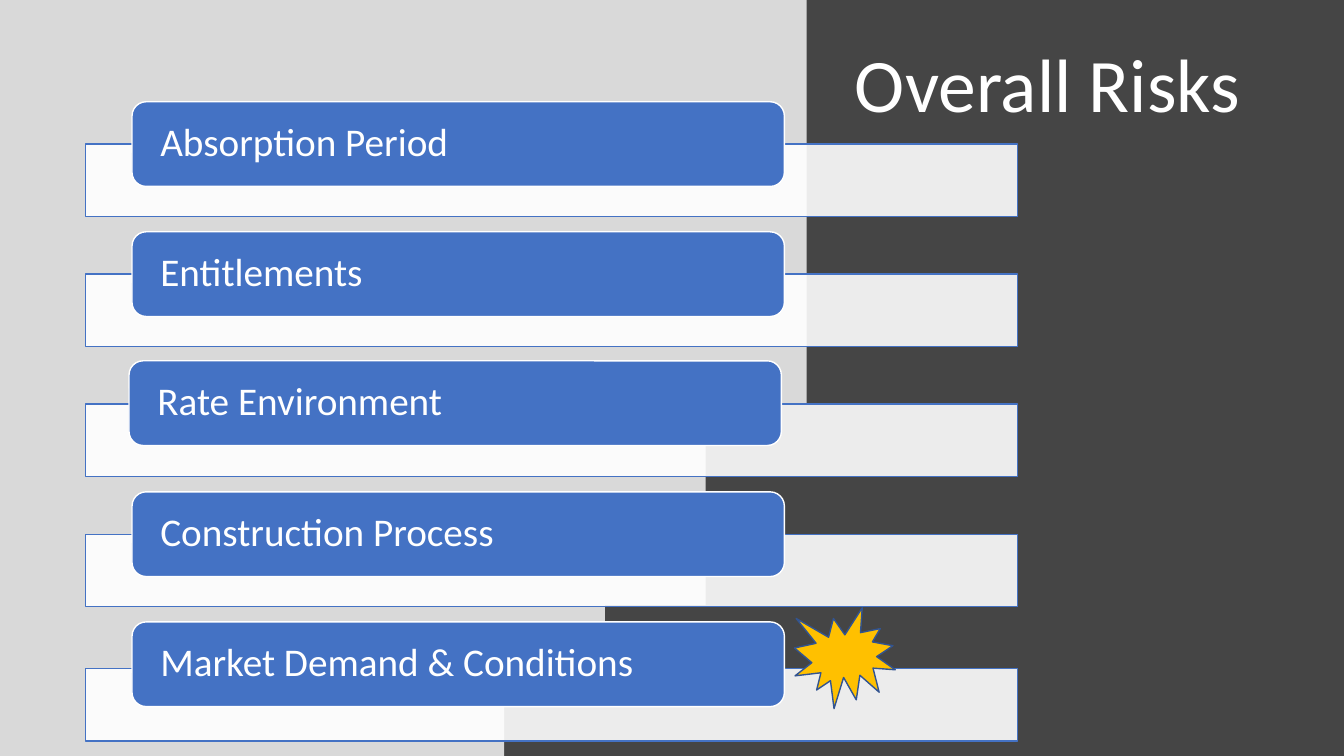
from lxml import etree
from pptx import Presentation
from pptx.dml.color import RGBColor
from pptx.enum import shapes, text
from pptx.oxml.ns import qn
from pptx.util import Inches, Pt

WHITE = RGBColor(0xFF, 0xFF, 0xFF)
DARK = RGBColor(0x45, 0x45, 0x45)
BLUE = RGBColor(0x44, 0x72, 0xC4)
NAVY = RGBColor(0x32, 0x54, 0x91)
GOLD = RGBColor(0xFF, 0xC0, 0x00)
KIND = shapes.MSO_SHAPE


def paint(shape, fill, line=None, alpha=100):
    """Set fill, its opacity in percent, and a 1 pt line or none."""
    shape.shadow.inherit = False
    shape.fill.solid()
    shape.fill.fore_color.rgb = fill
    if alpha < 100:
        color = shape.fill._xPr.find(qn("a:solidFill"))[0]
        etree.SubElement(color, qn("a:alpha"), val=str(alpha * 1000))
    if line is None:
        shape.line.fill.background()
    else:
        shape.line.color.rgb = line
        shape.line.width = Pt(1)


def curve(a, b, c, d, steps=40):
    """Points along a cubic Bezier curve, without its start."""
    for i in range(1, steps + 1):
        t = i / steps
        s = 1 - t
        yield tuple(s**3 * p + 3 * s * s * t * q + 3 * s * t * t * r + t**3 * e
                    for p, q, r, e in zip(a, b, c, d))


prs = Presentation()
prs.slide_width, prs.slide_height = Inches(13.33), Inches(7.5)
slide = prs.slides.add_slide(prs.slide_layouts[5])
slide.background.fill.solid()
slide.background.fill.fore_color.rgb = DARK

# Title
title = slide.shapes.title
title.left, title.top = Inches(8.38), Inches(0.31)
title.width, title.height = Inches(4.46), Inches(1.02)
frame = title.text_frame
frame.text = "Overall Risks"
frame.vertical_anchor = text.MSO_ANCHOR.BOTTOM
para = frame.paragraphs[0]
para.alignment = text.PP_ALIGN.LEFT
para.line_spacing = 0.9
para.space_after = Pt(6)
para.font.size, para.font.name = Pt(54), "Calibri"
para.font.color.rgb = WHITE

# Pale panel with a curved right edge
edge = [(7.74, 0), (7.77, 0.19)]
edge += curve(edge[-1], (7.83, 0.59), (7.86, 1), (7.86, 1.41))
edge += curve(edge[-1], (7.86, 3.72), (6.95, 5.81), (5.47, 7.34))
edge += [(5.3, 7.5), (0, 7.5)]
pen = slide.shapes.build_freeform(0, 0, scale=Inches(1))
pen.add_line_segments(edge, close=True)
paint(pen.convert_to_shape(), WHITE, alpha=80)

# Risk rows: label, then bar top, label left and label top
PITCH = 1.29
risks = [
    ("Absorption Period", 1.43, 1.31, 1.01),
    ("Entitlements", 1.43, 1.31, 1.01),
    ("Rate Environment", 1.43, 1.28, 1.0),
    ("Construction Process", 1.43, 1.31, 1.01),
    ("Market Demand & Conditions", 1.47, 1.31, 1.01),
]
for i, (name, low, left, top) in enumerate(risks):
    bar = slide.shapes.add_shape(
        KIND.RECTANGLE, Inches(0.85), Inches(low + i * PITCH),
        Inches(9.24), Inches(0.72))
    paint(bar, WHITE, BLUE, 90)

    label = slide.shapes.add_shape(
        KIND.ROUNDED_RECTANGLE, Inches(left), Inches(top + i * PITCH),
        Inches(6.47), Inches(0.84))
    paint(label, BLUE, WHITE)
    frame = label.text_frame
    frame.text = name
    frame.margin_left = frame.margin_right = Inches(0.24)
    frame.margin_top = frame.margin_bottom = 0
    frame.vertical_anchor = text.MSO_ANCHOR.MIDDLE
    para = frame.paragraphs[0]
    para.alignment = text.PP_ALIGN.LEFT
    para.line_spacing = 0.9
    para.font.size, para.font.name = Pt(28), "Calibri"
    para.font.color.rgb = WHITE

# Highlight on the last risk
burst = slide.shapes.add_shape(
    KIND.EXPLOSION1, Inches(7.88), Inches(6.03), Inches(1), Inches(1))
paint(burst, GOLD, NAVY)

prs.save("out.pptx")
